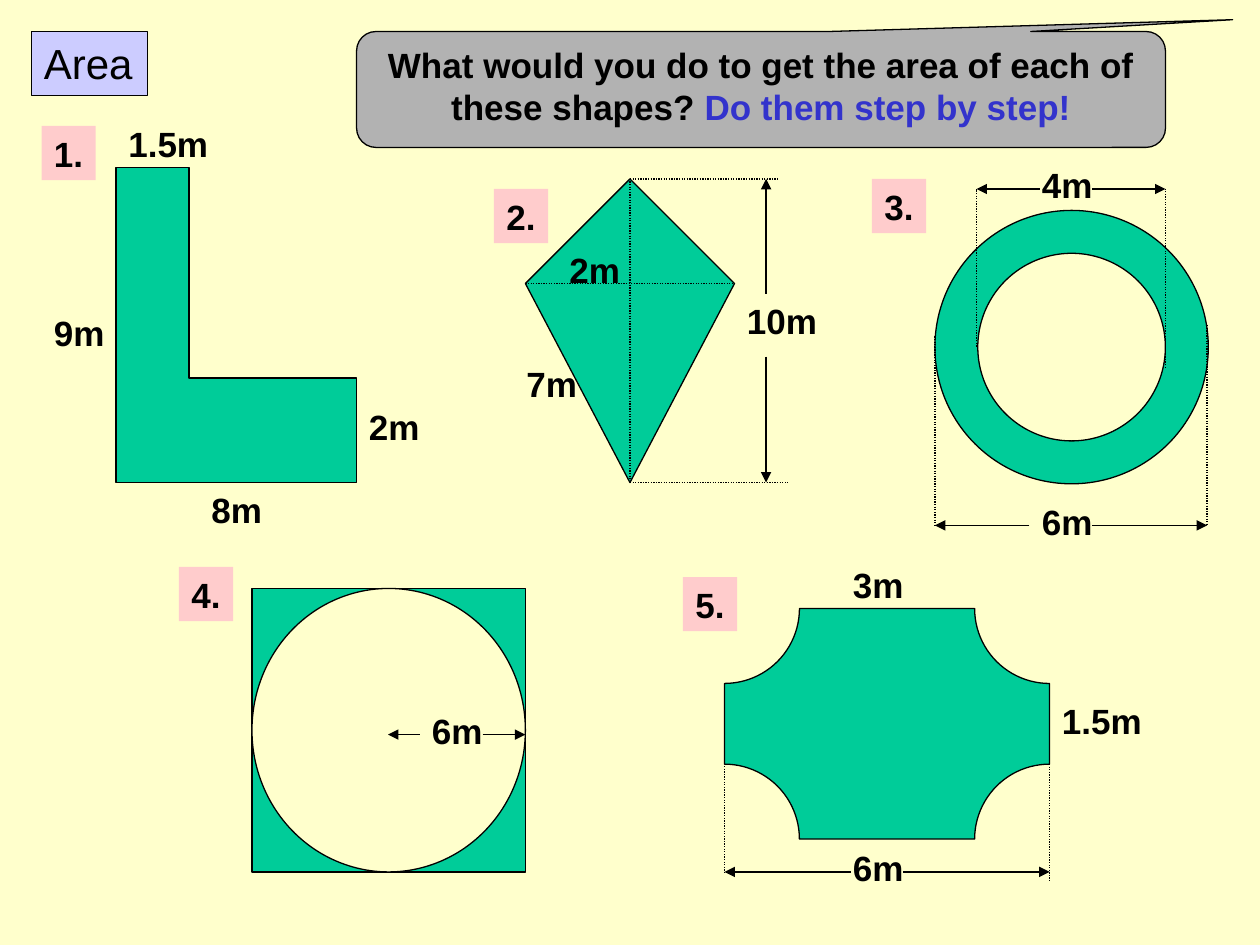
from lxml import etree
from pptx import Presentation
from pptx import util as u
from pptx.dml.color import RGBColor
from pptx.enum import dml, shapes, text
from pptx.oxml import ns

CREAM = RGBColor(0xFF, 0xFF, 0xCC)
LILAC = RGBColor(0xCC, 0xCC, 0xFF)
GREY = RGBColor(0xB2, 0xB2, 0xB2)
PINK = RGBColor(0xFF, 0xCC, 0xCC)
GREEN = RGBColor(0x00, 0xCC, 0x99)
BLUE = RGBColor(0x33, 0x33, 0xCC)
BLACK = RGBColor(0, 0, 0)
SHAPE = shapes.MSO_SHAPE

# Content: lengths in inches
TITLE = "Area"
QUESTION = [("What would you do to get the area of each of these shapes? ", BLACK),
            ("Do them step by step!", BLUE)]

TAG_SIZE = 0.43
LABEL_WIDTHS = {2: 0.61, 3: 0.77, 4: 0.85}  # by number of characters

# Each problem: tag corner, outlines or presets, labels, dotted guides, arrows
PROBLEMS = [
    dict(tag=(0.33, 1),
         outline=[(0.92, 1.33), (0.92, 3.83), (2.83, 3.83), (2.83, 3), (1.5, 3), (1.5, 1.33)],
         labels=[("9m", 0.33, 2.42), ("1.5m", 0.92, 0.92), ("2m", 2.83, 3.17),
                 ("8m", 1.58, 3.83)]),
    dict(tag=(3.92, 1.5),
         outline=[(5, 1.42), (4.17, 2.25), (5, 3.83), (5.83, 2.25)],
         labels=[("7m", 4.08, 2.83), ("2m", 4.42, 1.92), ("10m", 5.83, 2.33)],
         guides=[(5, 1.42, 5, 3.83), (4.17, 2.25, 5.83, 2.25),
                 (5, 1.42, 6.17, 1.42), (5, 3.83, 6.25, 3.83)],
         arrows=[(6.08, 2.83, 6.08, 3.83), (6.08, 2.33, 6.08, 1.42)]),
    dict(tag=(6.92, 1.42),
         presets=[(SHAPE.DONUT, (7.42, 1.67, 2.17, 2.17), GREEN, [0.157])],
         labels=[("6m", 8.17, 3.92), ("4m", 8.17, 1.25)],
         guides=[(7.42, 2.67, 7.42, 4.17), (9.58, 2.58, 9.58, 4.17),
                 (7.75, 2.75, 7.75, 1.5), (9.25, 2.92, 9.25, 1.5)],
         arrows=[(8.67, 4.17, 9.58, 4.17), (8.17, 4.17, 7.42, 4.17),
                 (8.67, 1.5, 9.25, 1.5), (8.25, 1.5, 7.75, 1.5)]),
    dict(tag=(1.42, 4.5),
         presets=[(SHAPE.RECTANGLE, (2, 4.67, 2.17, 2.25), GREEN, []),
                  (SHAPE.OVAL, (2, 4.67, 2.17, 2.25), CREAM, [])],
         labels=[("6m", 3.33, 5.58)],
         arrows=[(3.33, 5.83, 3.08, 5.83), (3.83, 5.83, 4.17, 5.83)]),
    dict(tag=(5.42, 4.58),
         presets=[(SHAPE.PLAQUE, (5.75, 4.83, 2.58, 1.83), GREEN, [0.325])],
         labels=[("6m", 6.67, 6.67), ("1.5m", 8.33, 5.5), ("3m", 6.67, 4.42)],
         guides=[(5.75, 6.08, 5.75, 6.92), (8.33, 5.92, 8.33, 7)],
         arrows=[(7.17, 6.92, 8.33, 6.92), (6.75, 6.92, 5.75, 6.92)]),
]

deck = Presentation()
deck.slide_width, deck.slide_height = u.Inches(10), u.Inches(7.5)
page = deck.slides.add_slide(deck.slide_layouts[6])
page.background.fill.solid()
page.background.fill.fore_color.rgb = CREAM


def inches(*values):
    return [u.Inches(value) for value in values]


def paint(shape, fill, outlined=True):
    shape.shadow.inherit = False
    shape.fill.solid()
    shape.fill.fore_color.rgb = fill
    if outlined:
        shape.line.color.rgb = BLACK
        shape.line.width = u.Pt(0.75)
    else:
        shape.line.fill.background()
    return shape


def add_preset(kind, place, fill, adjustments=(), outlined=True):
    shape = page.shapes.add_shape(kind, *inches(*place))
    for index, value in enumerate(adjustments):
        shape.adjustments[index] = value
    return paint(shape, fill, outlined)


def add_outline(points):
    start, *rest = [inches(*point) for point in points]
    builder = page.shapes.build_freeform(*start)
    builder.add_line_segments(rest, close=True)
    paint(builder.convert_to_shape(), GREEN)


def write(box, spans, size=20, bold=True, wrap=False, align=text.PP_ALIGN.LEFT):
    frame = box.text_frame
    frame.word_wrap = wrap
    if not wrap:
        frame.auto_size = text.MSO_AUTO_SIZE.SHAPE_TO_FIT_TEXT
    frame.vertical_anchor = text.MSO_ANCHOR.TOP
    para = frame.paragraphs[0]
    para.alignment = align
    for words, color in spans:
        span = para.add_run()
        span.text = words
        span.font.name = "Arial"
        span.font.size = u.Pt(size)
        span.font.bold = bold
        span.font.color.rgb = color


def add_line(ends, dotted=False):
    line = page.shapes.add_connector(shapes.MSO_CONNECTOR.STRAIGHT, *inches(*ends))
    line.line.color.rgb = BLACK
    line.line.width = u.Pt(0.75)
    if dotted:
        line.line.dash_style = dml.MSO_LINE.ROUND_DOT
    else:
        etree.SubElement(line.line._get_or_add_ln(), ns.qn("a:tailEnd"), type="triangle")
    etree.SubElement(line._element.spPr, ns.qn("a:effectLst"))


# Heading and question
write(add_preset(SHAPE.RECTANGLE, (0.25, 0.25, 0.92, 0.51), LILAC),
      [(TITLE, BLACK)], size=24, bold=False)
write(add_preset(SHAPE.ROUNDED_RECTANGULAR_CALLOUT, (2.83, 0.25, 6.42, 0.92), GREY,
                 [0.583, -0.602, 0.167]),
      QUESTION, wrap=True, align=text.PP_ALIGN.CENTER)

# Numbered problems
for number, problem in enumerate(PROBLEMS, start=1):
    tag = add_preset(SHAPE.RECTANGLE, (*problem["tag"], TAG_SIZE, TAG_SIZE), PINK,
                     outlined=False)
    write(tag, [(f"{number}.", BLACK)])
    if "outline" in problem:
        add_outline(problem["outline"])
    for preset in problem.get("presets", []):
        add_preset(*preset)
    for ends in problem.get("guides", []):
        add_line(ends, dotted=True)
    for ends in problem.get("arrows", []):
        add_line(ends)
    for words, left, top in problem["labels"]:
        place = inches(left, top, LABEL_WIDTHS[len(words)], TAG_SIZE)
        write(page.shapes.add_textbox(*place), [(words, BLACK)])

deck.save("out.pptx")
